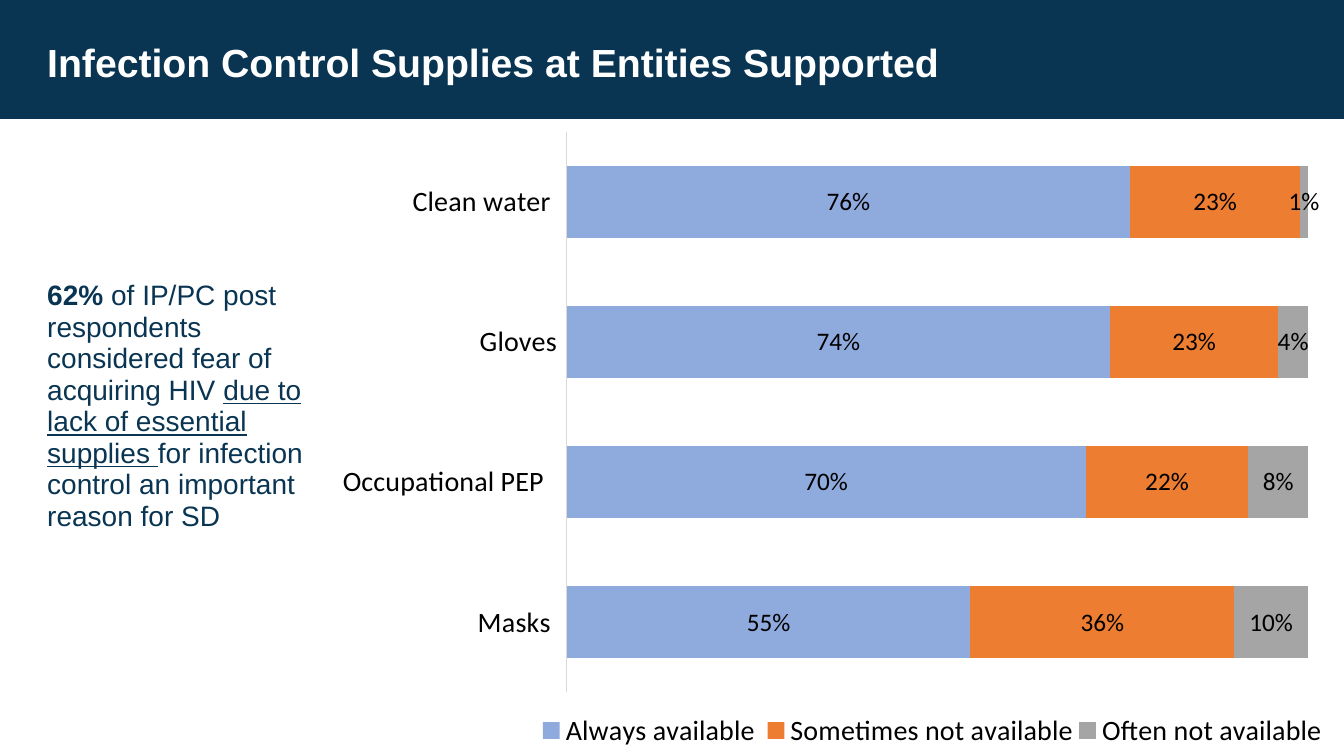
from lxml.etree import SubElement
from pptx import Presentation
from pptx.chart.data import CategoryChartData
from pptx.dml.color import RGBColor
from pptx.enum.chart import XL_CHART_TYPE, XL_LABEL_POSITION, XL_LEGEND_POSITION, XL_TICK_LABEL_POSITION, XL_TICK_MARK
from pptx.enum.shapes import MSO_SHAPE
from pptx.oxml.ns import qn
from pptx.util import Inches, Pt

NAVY = RGBColor(0x09, 0x35, 0x52)
WHITE = RGBColor(0xFF, 0xFF, 0xFF)
BLACK = RGBColor(0, 0, 0)
AXIS_GRAY = RGBColor(0xD9, 0xD9, 0xD9)
BLUE = RGBColor(0x8F, 0xAA, 0xDC)
ORANGE = RGBColor(0xED, 0x7D, 0x31)
GRAY = RGBColor(0xA5, 0xA5, 0xA5)

SUPPLIES = ["Masks ", "Occupational PEP  ", "Gloves", "Clean water "]
AVAILABILITY = [
    ("Always available ", [0.55, 0.70, 0.74, 0.76], BLUE),
    ("Sometimes not available", [0.36, 0.22, 0.23, 0.23], ORANGE),
    ("Often not available", [0.10, 0.08, 0.04, 0.01], GRAY),
]
FINDING = [
    ("62% ", {"bold": True}),
    ("of IP/PC post respondents considered fear of acquiring HIV ", {}),
    ("due to lack of essential supplies ", {"underline": True}),
    ("for infection control an important reason for SD", {}),
]


def set_font(font, size, color=BLACK, name="Calibri", bold=False, underline=False):
    font.size = Pt(size)
    font.name = name
    font.bold = bold
    font.underline = underline
    font.color.rgb = color


def add_text(s, runs, left, top, width, height, size, color, top_inset=0.05):
    tb = s.shapes.add_textbox(Inches(left), Inches(top), Inches(width), Inches(height))
    tf = tb.text_frame
    tf.word_wrap = True
    tf.margin_top = Inches(top_inset)
    p = tf.paragraphs[0]
    p.line_spacing = 0.94
    for text, style in runs:
        r = p.add_run()
        r.text = text
        set_font(r.font, size, color, "Arial", **style)


def add_header(s, left, top, width, height):
    band = s.shapes.add_shape(MSO_SHAPE.RECTANGLE, Inches(left), Inches(top),
                              Inches(width), Inches(height))
    band.shadow.inherit = False
    band.fill.solid()
    band.fill.fore_color.rgb = NAVY
    band.line.fill.background()
    title = [("Infection Control Supplies at Entities Supported", {"bold": True})]
    add_text(s, title, left + 0.37, top + 0.37, 12.04, 0.8, 28, WHITE)


def set_layout(element, x, y, w, h, inner=False):
    """Fix a plot area or legend at fractions of the chart's size."""
    layout = element.find(qn("c:layout"))
    if layout is None:
        layout = SubElement(element, qn("c:layout"))
        anchor = element.find(qn("c:legendPos"))
        if anchor is None:
            element.insert(0, layout)
        else:
            anchor.addnext(layout)
    manual = SubElement(layout, qn("c:manualLayout"))
    settings = [("layoutTarget", "inner")] if inner else []
    settings += [("xMode", "edge"), ("yMode", "edge"), ("x", x), ("y", y), ("w", w), ("h", h)]
    for tag, value in settings:
        SubElement(manual, qn("c:" + tag)).set("val", str(value))


def format_axes(chart):
    axis = chart.category_axis
    axis.major_tick_mark = axis.minor_tick_mark = XL_TICK_MARK.NONE
    axis.tick_label_position = XL_TICK_LABEL_POSITION.LOW
    axis.format.line.color.rgb = AXIS_GRAY
    axis.format.line.width = Pt(0.75)
    set_font(axis.tick_labels.font, 20)
    values = chart.value_axis
    values.visible = False
    values.has_major_gridlines = False
    values.minimum_scale, values.maximum_scale = 0, 1


def format_series(plot):
    plot.gap_width = 95
    plot.overlap = 100
    plot.vary_by_categories = False
    for series, (_, _, color) in zip(plot.series, AVAILABILITY):
        series.format.fill.solid()
        series.format.fill.fore_color.rgb = color
        labels = series.data_labels
        labels.show_value = True
        labels.number_format = "0%"
        labels.number_format_is_linked = False
        labels.position = XL_LABEL_POSITION.CENTER
        set_font(labels.font, 18)


def add_supply_chart(s, left, top, width, height):
    data = CategoryChartData(number_format="0%")
    data.categories = SUPPLIES
    for name, shares, _ in AVAILABILITY:
        data.add_series(name, shares)
    chart = s.shapes.add_chart(XL_CHART_TYPE.BAR_STACKED_100, Inches(left), Inches(top),
                               Inches(width), Inches(height), data).chart
    chart.has_title = False
    set_font(chart.font, 10)
    format_axes(chart)
    format_series(chart.plots[0])
    chart.has_legend = True
    legend = chart.legend
    legend.position = XL_LEGEND_POSITION.BOTTOM
    legend.include_in_layout = False
    set_font(legend.font, 20)
    set_layout(chart.plots[0]._element.getparent(), 0.24, 0.02, 0.74, 0.88, inner=True)
    set_layout(legend._element, 0.21, 0.92, 0.79, 0.08)


def main():
    prs = Presentation()
    prs.slide_width, prs.slide_height = Inches(13.33), Inches(7.5)
    s = prs.slides.add_slide(prs.slide_layouts[6])
    add_header(s, 0, 0, 13.33, 1.18)
    add_text(s, FINDING, 0.37, 1.38, 2.87, 5.46, 20, NAVY, top_inset=1.4)
    add_supply_chart(s, 3.24, 1.18, 9.93, 6.32)
    prs.save("out.pptx")


if __name__ == "__main__":
    main()
